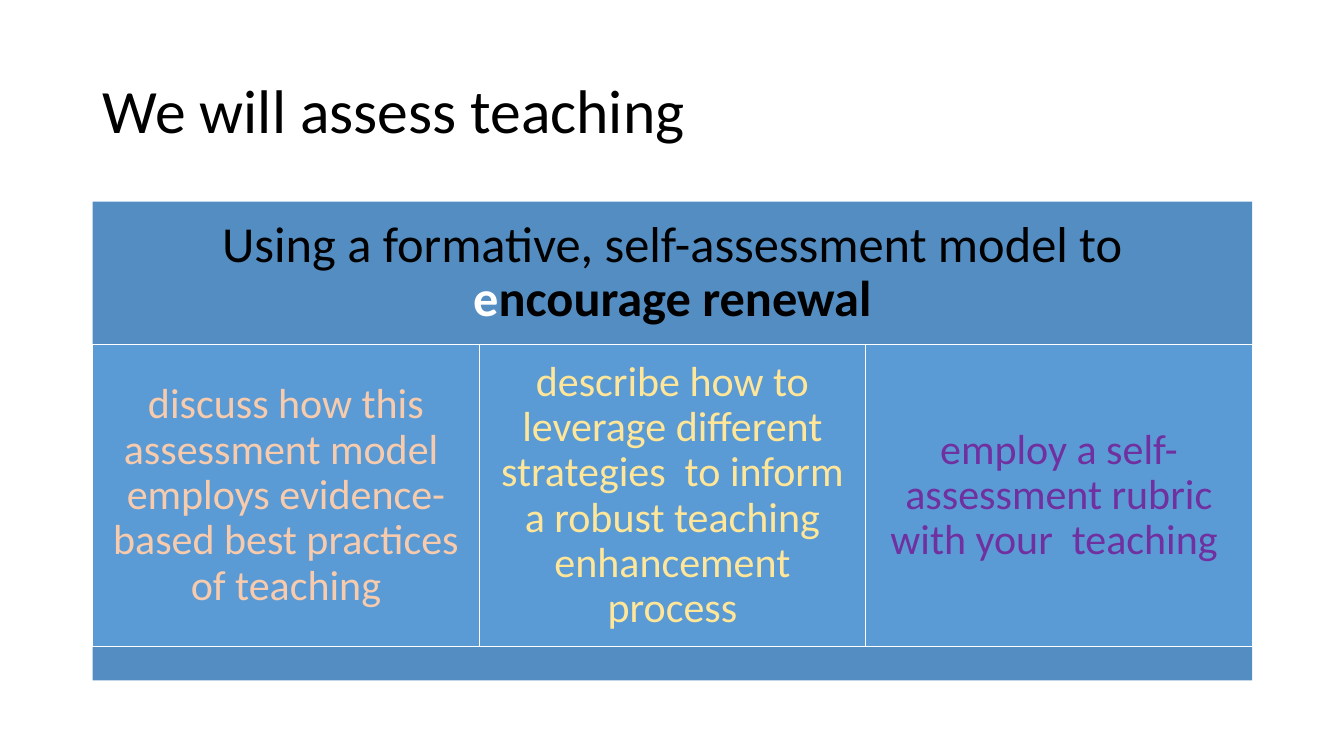
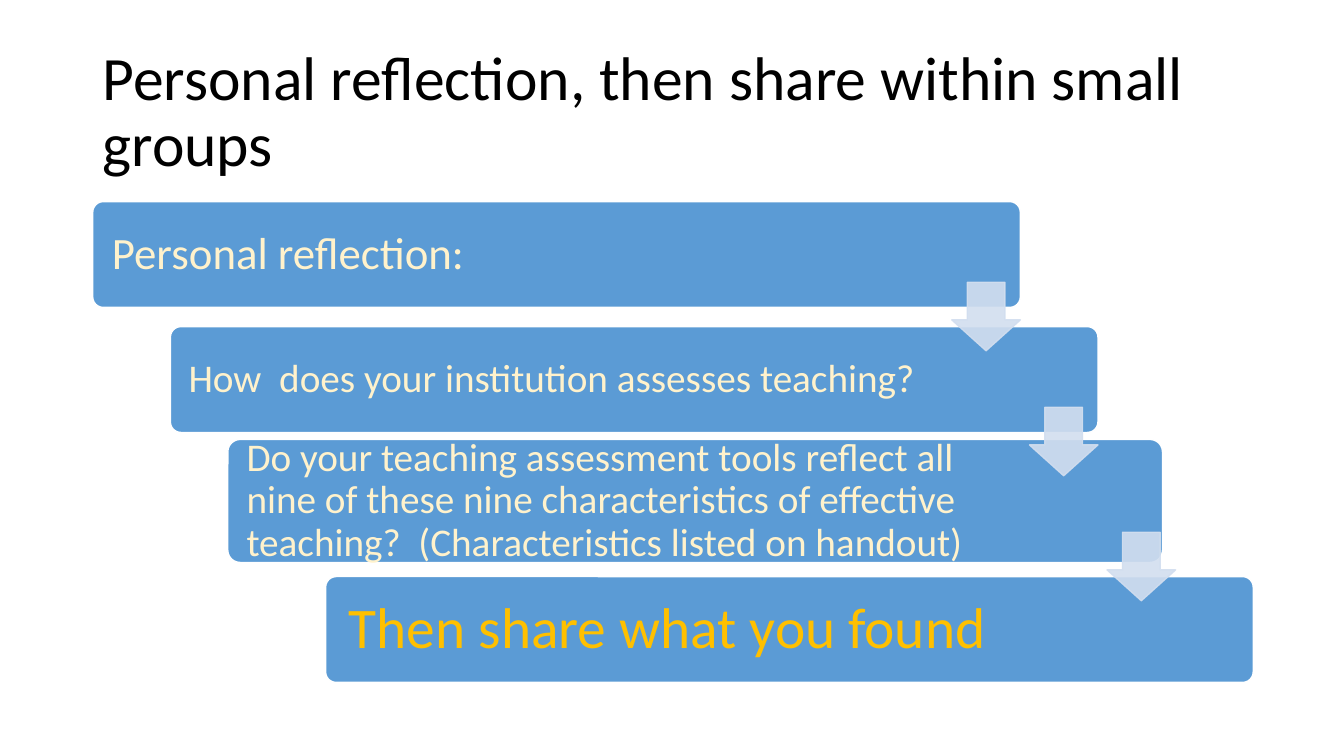
from typing import NamedTuple, Optional

from lxml.etree import SubElement
from pptx import Presentation
from pptx.dml.color import RGBColor
from pptx.enum.shapes import MSO_SHAPE
from pptx.enum.text import MSO_ANCHOR, PP_ALIGN
from pptx.oxml.ns import qn
from pptx.util import Inches, Pt

BLACK = RGBColor(0x00, 0x00, 0x00)
WHITE = RGBColor(0xFF, 0xFF, 0xFF)
BLUE = RGBColor(0x5B, 0x9B, 0xD5)
DARK_BLUE = RGBColor(0x53, 0x8D, 0xC1)
PALE_BLUE = RGBColor(0xD2, 0xDE, 0xEF)
PEACH = RGBColor(0xF8, 0xCB, 0xAD)
YELLOW = RGBColor(0xFF, 0xE6, 0x99)
PURPLE = RGBColor(0x70, 0x30, 0xA0)
CREAM = RGBColor(0xFF, 0xF2, 0xCC)
GOLD = RGBColor(0xFF, 0xC0, 0x00)

FONT = "Calibri"
LEFT, TOP, WIDTH = 0.92, 2.0, 11.5
HEADER_H, COLUMN_H, FOOTER_H = 1.42, 3.0, 0.33
STEP_W, STEP_H = 9.2, 1.05
STEP_DX, STEP_DY = 0.77, 1.24
ARROW_SIZE, ARROW_DROP = 0.68, 0.8
ARROW_OPACITY = 90


class Box(NamedTuple):
    left: float
    top: float
    width: float
    height: float

    def lengths(self) -> list:
        return [Inches(v) for v in self]


class Run(NamedTuple):
    text: str
    size: float
    color: RGBColor
    bold: bool = False


class Step(NamedTuple):
    run: Run
    inset: float
    text_width: float
    box: Optional[Box] = None


COLUMNS = [
    Run("discuss how this assessment model  employs evidence-based best "
        "practices of teaching", 30, PEACH),
    Run("describe how to leverage different strategies  to inform a robust "
        "teaching enhancement process", 30, YELLOW),
    Run("employ a self-assessment rubric with your  teaching ", 30, PURPLE),
]

STEPS = [
    Step(Run("Personal reflection:", 32, CREAM), 0.16, 7.98),
    Step(Run("How  does your institution assesses teaching?", 28, CREAM), 0.15, 7.69),
    Step(Run("Do your teaching assessment tools reflect all nine of these nine "
             "characteristics of effective teaching?  (Characteristics listed "
             "on handout)", 28, CREAM), 0.15, 7.75, Box(2.26, 4.36, 9.27, 1.22)),
    Step(Run("Then share what you found", 41, GOLD), 0.2, 7.69),
]


def write(shape, runs: list[Run], align=PP_ALIGN.LEFT, inset: float = 0.1,
          inset_y: float = 0.05, inset_right: Optional[float] = None) -> None:
    tf = shape.text_frame
    right = inset if inset_right is None else inset_right
    frame_format = {
        "word_wrap": True,
        "vertical_anchor": MSO_ANCHOR.MIDDLE,
        "margin_left": Inches(inset),
        "margin_right": Inches(right),
        "margin_top": Inches(inset_y),
        "margin_bottom": Inches(inset_y),
    }
    for name, value in frame_format.items():
        setattr(tf, name, value)
    p = tf.paragraphs[0]
    p.alignment = align
    p.line_spacing = 0.9
    for run in runs:
        r = p.add_run()
        r.text = run.text
        run_format = {"name": FONT, "size": Pt(run.size), "bold": run.bold}
        for name, value in run_format.items():
            setattr(r.font, name, value)
        r.font.color.rgb = run.color


def add_block(s, kind, box: Box, fill: RGBColor, line: Optional[RGBColor] = None,
              adjustments: tuple = ()):
    sp = s.shapes.add_shape(kind, *box.lengths())
    sp.shadow.inherit = False
    sp.fill.solid()
    sp.fill.fore_color.rgb = fill
    if line is None:
        sp.line.fill.background()
    else:
        sp.line.color.rgb = line
        sp.line.width = Pt(1)
    for i, value in enumerate(adjustments):
        sp.adjustments[i] = value
    return sp


def set_opacity(sp, percent: int) -> None:
    """Apply the opacity to both the fill and the outline."""
    for color in sp._element.spPr.iter(qn("a:srgbClr")):
        SubElement(color, qn("a:alpha"), val=str(percent * 1000))


def add_titled_slide(prs, title: str):
    s = prs.slides.add_slide(prs.slide_layouts[6])
    tb = s.shapes.add_textbox(*Box(LEFT, 0.4, WIDTH, 1.45).lengths())
    write(tb, [Run(title, 44, BLACK)])
    return s


def build_assessment(prs) -> None:
    s = add_titled_slide(prs, "We will assess teaching")
    header = add_block(s, MSO_SHAPE.RECTANGLE, Box(LEFT, TOP, WIDTH, HEADER_H), DARK_BLUE)
    write(header, [
        Run("Using a formative, self-assessment model to ", 36, BLACK),
        Run("e", 36, WHITE, True),
        Run("ncourage renewal", 36, BLACK, True),
    ], PP_ALIGN.CENTER, 0.15, 0.15)

    column_top = TOP + HEADER_H
    column_w = WIDTH / len(COLUMNS)
    for i, run in enumerate(COLUMNS):
        box = Box(LEFT + i * column_w, column_top, column_w, COLUMN_H)
        column = add_block(s, MSO_SHAPE.RECTANGLE, box, BLUE, WHITE)
        write(column, [run], PP_ALIGN.CENTER, 0.12, 0.12)

    footer = Box(LEFT, column_top + COLUMN_H, WIDTH, FOOTER_H)
    add_block(s, MSO_SHAPE.RECTANGLE, footer, DARK_BLUE)


def build_reflection(prs) -> None:
    s = add_titled_slide(prs, "Personal reflection, then share within small groups")
    stairs = [Box(LEFT + i * STEP_DX, TOP + i * STEP_DY, STEP_W, STEP_H)
              for i in range(len(STEPS))]
    for step, stair in zip(STEPS, stairs):
        box = step.box or stair
        card = add_block(s, MSO_SHAPE.ROUNDED_RECTANGLE, box, BLUE, WHITE, (0.1,))
        write(card, [step.run], inset=step.inset, inset_y=step.inset,
              inset_right=box.width - step.text_width + step.inset - 0.06)

    for stair in stairs[:-1]:
        box = Box(stair.left + STEP_W - ARROW_SIZE, stair.top + ARROW_DROP,
                  ARROW_SIZE, ARROW_SIZE)
        arrow = add_block(s, MSO_SHAPE.DOWN_ARROW, box, PALE_BLUE, PALE_BLUE)
        # The preset lists its head length and shaft width in this order.
        arrow.adjustments[0], arrow.adjustments[1] = 0.55, 0.45
        set_opacity(arrow, ARROW_OPACITY)


def main() -> None:
    prs = Presentation()
    prs.slide_width, prs.slide_height = Inches(13.33), Inches(7.5)
    build_assessment(prs)
    build_reflection(prs)
    prs.save("out.pptx")


if __name__ == "__main__":
    main()
